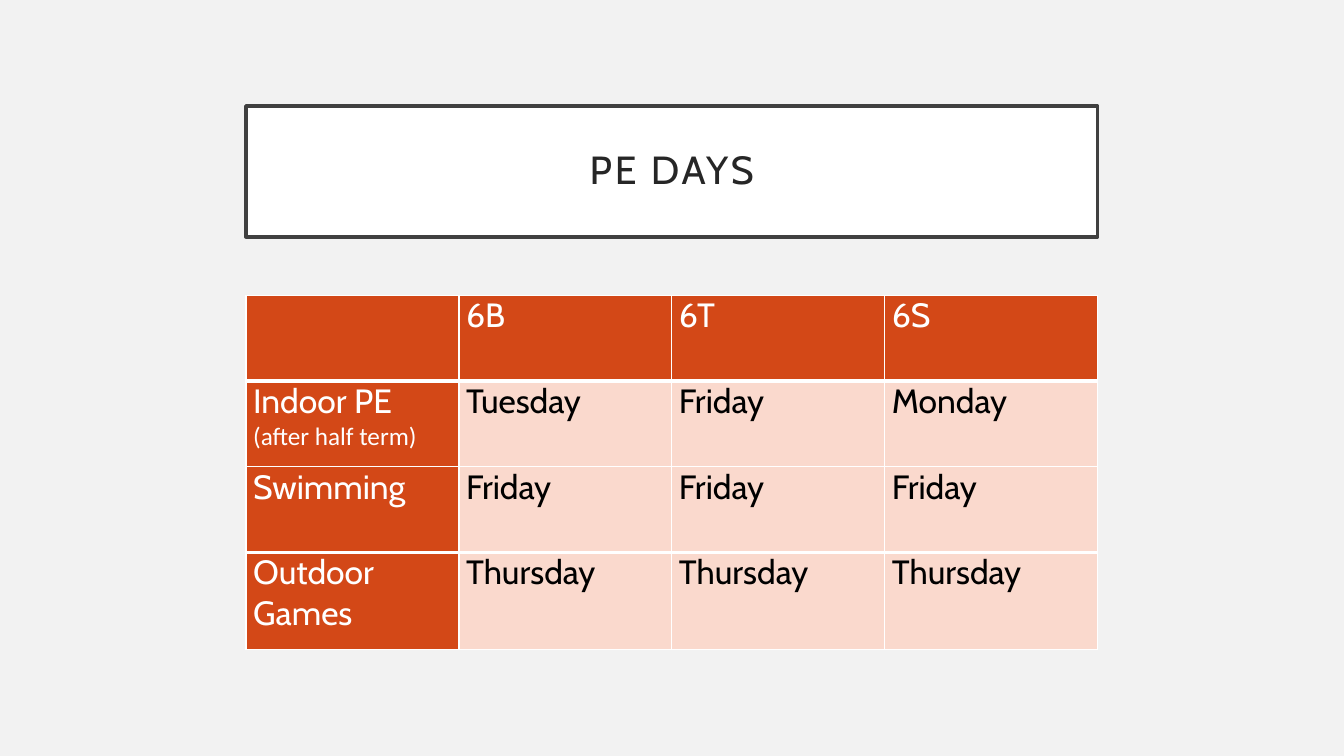
from lxml.etree import SubElement
from pptx import Presentation
from pptx.dml.color import RGBColor
from pptx.enum.text import MSO_ANCHOR, MSO_AUTO_SIZE, PP_ALIGN
from pptx.oxml import parse_xml
from pptx.oxml.ns import nsdecls, qn
from pptx.util import Cm, Pt

COLORS = {
    "back": "F2F2F2",
    "white": "FFFFFF",
    "frame": "404040",
    "title": "262626",
    "accent": "D34817",
    "tint": "FAD9CD",
    "text": "000000",
}
LEFT, WIDTH = 6.2, 21.46
ROW_HEIGHTS = [2.16, 2.16, 2.16, 2.44]
THICK_RULES = {1, 3}
TIMETABLE = [
    ["", "6B", "6T", "6S"],
    ["Indoor PE\n(after half term)", "Tuesday", "Friday", "Monday"],
    ["Swimming", "Friday", "Friday", "Friday"],
    ["Outdoor Games", "Thursday", "Thursday", "Thursday"],
]


def rgb(name):
    return RGBColor.from_string(COLORS[name])


class Deck:
    def __init__(self):
        self.prs = Presentation()
        self.prs.slide_width, self.prs.slide_height = Cm(33.87), Cm(19.05)
        self.s = self.prs.slides.add_slide(self.prs.slide_layouts[5])
        fill = self.s.background.fill
        fill.solid()
        fill.fore_color.rgb = rgb("back")

    def style(self, p, size, color, font="Cabin"):
        p.font.size = Pt(size)
        p.font.name = font
        p.font.color.rgb = rgb(color)

    def title(self, text, top, height):
        sp = self.s.shapes.title
        sp.left, sp.top = Cm(LEFT), Cm(top)
        sp.width, sp.height = Cm(WIDTH), Cm(height)
        sp.fill.solid()
        sp.fill.fore_color.rgb = rgb("white")
        sp.line.color.rgb = rgb("frame")
        sp.line.width = Pt(2.5)
        tf = sp.text_frame
        tf.text = text
        tf.word_wrap = True
        tf.auto_size = MSO_AUTO_SIZE.NONE
        tf.vertical_anchor = MSO_ANCHOR.MIDDLE
        tf.margin_left = tf.margin_right = Cm(0.5)
        tf.margin_top = tf.margin_bottom = Cm(0.5)
        p = tf.paragraphs[0]
        p.alignment = PP_ALIGN.CENTER
        p.line_spacing = 0.9
        self.style(p, 28, "title")
        p.runs[0].font._element.set("spc", "200")

    def borders(self, cell, top, bottom):
        tcPr = cell._tc.get_or_add_tcPr()
        sides = {"lnL": 1, "lnR": 1, "lnT": top, "lnB": bottom}
        for i, (side, width) in enumerate(sides.items()):
            ln = parse_xml(f'<a:{side} {nsdecls("a")} w="{Pt(width)}"/>')
            fill = SubElement(ln, qn("a:solidFill"))
            SubElement(fill, qn("a:srgbClr"), val=COLORS["white"])
            tcPr.insert(i, ln)

    def cell(self, cell, text, row, col):
        header = row == 0 or col == 0
        cell.text = text
        cell.margin_left = cell.margin_right = Cm(0.18)
        cell.margin_top = cell.margin_bottom = 0
        cell.fill.solid()
        cell.fill.fore_color.rgb = rgb("accent" if header else "tint")
        color = "white" if header else "text"
        first, *notes = cell.text_frame.paragraphs
        first.alignment = PP_ALIGN.JUSTIFY
        self.style(first, 24, color)
        for p in notes:
            self.style(p, 18, color, "Calibri")
        top, bottom = (3 if r in THICK_RULES else 1 for r in (row, row + 1))
        self.borders(cell, top, bottom)

    def table(self, rows, heights, top):
        count = len(rows[0])
        frame = self.s.shapes.add_table(len(rows), count, Cm(LEFT), Cm(top),
                                        Cm(WIDTH), Cm(sum(heights)))
        tbl = frame.table
        tbl.first_row = tbl.horz_banding = False
        for column in tbl.columns:
            column.width = Cm(WIDTH / count)
        for r, (texts, height) in enumerate(zip(rows, heights)):
            tbl.rows[r].height = Cm(height)
            for c, text in enumerate(texts):
                self.cell(tbl.cell(r, c), text, r, c)


def main():
    deck = Deck()
    deck.title("PE DAYS", 2.67, 3.3)
    deck.table(TIMETABLE, ROW_HEIGHTS, 7.44)
    deck.prs.save("out.pptx")


if __name__ == "__main__":
    main()
